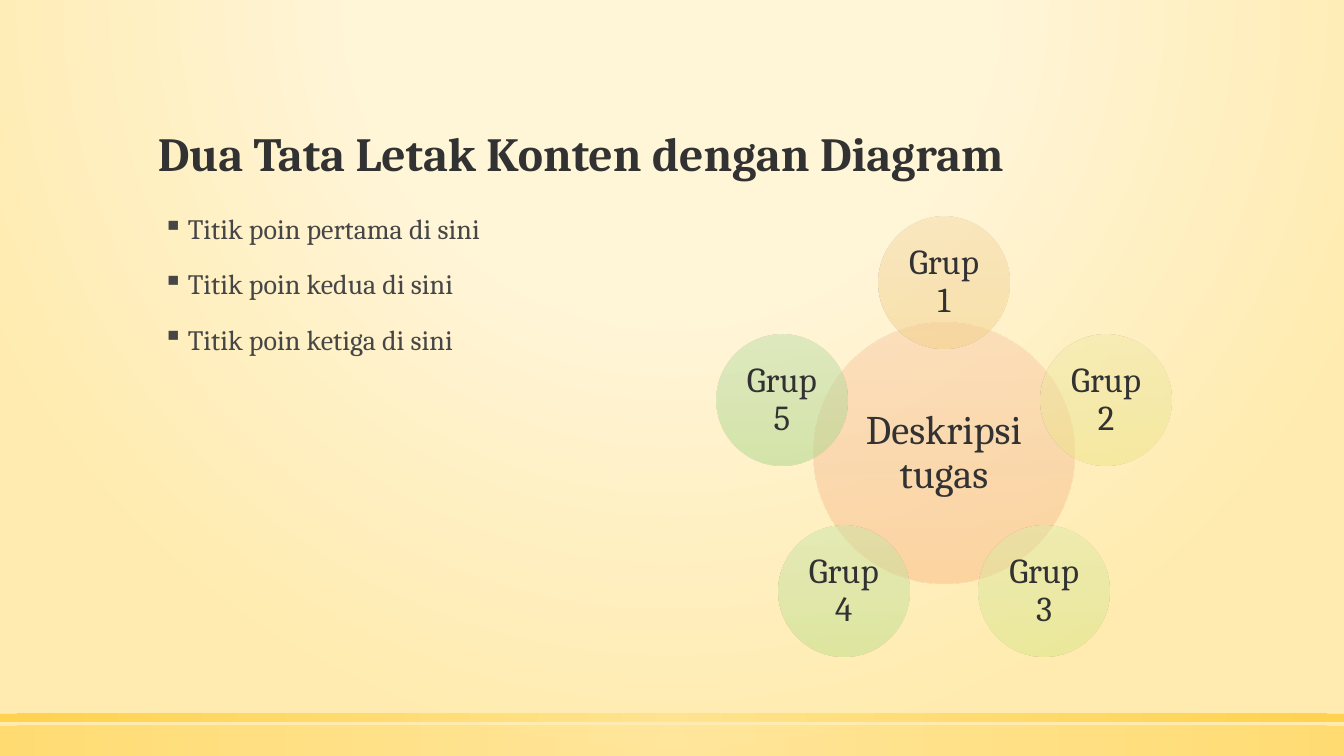
from math import cos, radians, sin

from pptx import Presentation
from pptx.dml.color import RGBColor
from pptx.enum.shapes import MSO_SHAPE
from pptx.enum.text import MSO_ANCHOR, PP_ALIGN
from pptx.oxml import parse_xml
from pptx.oxml.ns import nsdecls, qn
from pptx.util import Emu, Pt

PX = 914400 / 100.8
FONT = "Cambria"
COLORS = {"title": "323232", "body": "464646", "cream": "FFF5D7", "sand": "FFEBAF",
          "gold": "FFE186", "amber": "FFCD36"}
HUB = ("FACDA9", "F8C39A", "FBBB87")
GROUPS = [("F6DBA8", "F3D49A", "F5D187"), ("F1EAA8", "EDE59A", "EEE587"),
          ("E0EBA8", "DAE79A", "D8E787"), ("CDE6A8", "C5E19A", "BEE088"),
          ("BFE0A9", "B4DA9B", "A9D889")]
DOWN = '<a:lin ang="5400000" scaled="0"/>'
POINTS = ["Titik poin pertama di sini", "Titik poin kedua di sini", "Titik poin ketiga di sini"]


def px(*sizes):
    """Turn pixel lengths into EMU."""
    return [Emu(round(size * PX)) for size in sizes]


def radial(top, bottom):
    """Return a circular path centred across, with the given focus in percent."""
    return ('<a:path path="circle"><a:fillToRect l="50000" r="50000" '
            f't="{top * 1000}" b="{bottom * 1000}"/></a:path>')


def blend(owner, stops, way):
    """Swap the solid fill of an element for a gradient of (place, colour, opacity)."""
    marks = "".join(
        f'<a:gs pos="{place * 1000}"><a:srgbClr val="{color}">'
        f'<a:alpha val="{alpha * 1000}"/></a:srgbClr></a:gs>'
        for place, color, alpha in stops)
    solid = owner.find(".//" + qn("a:solidFill"))
    solid.getparent().replace(solid, parse_xml(
        f'<a:gradFill {nsdecls("a")} rotWithShape="1"><a:gsLst>{marks}</a:gsLst>{way}</a:gradFill>'))


def shape(slide, kind, box, stops, way):
    """Add a borderless shape with a gradient fill."""
    item = slide.shapes.add_shape(kind, *px(*box))
    item.shadow.inherit = False
    item.line.fill.background()
    item.fill.solid()
    blend(item._element, stops, way)
    return item


def write(para, text, size, color, bold=False):
    """Add one styled run to a paragraph."""
    para.line_spacing = 0.9
    run = para.add_run()
    run.text = text
    font = run.font
    font.name, font.size, font.bold = FONT, Pt(size), bold
    font.color.rgb = RGBColor.from_string(COLORS[color])


def frame(slide, box):
    """Add a wrapping text box and return its frame."""
    text = slide.shapes.add_textbox(*px(*box)).text_frame
    text.word_wrap = True
    return text


def backdrop(slide, width, height):
    """Paint the background and the two bars at the foot."""
    slide.background.fill.solid()
    cream = COLORS["cream"]
    blend(slide._element, [(0, cream, 59), (40, cream, 66), (100, COLORS["sand"], 100)],
          radial(-80, 180))
    for top, tall, alpha in ((height - 30, 30, 50), (height - 42, 8, 80)):
        shape(slide, MSO_SHAPE.RECTANGLE, (0, top, width, tall),
              [(0, COLORS["gold"], alpha), (100, COLORS["amber"], alpha)], radial(50, 50))


def heading(slide, box):
    """Place the title on the bottom of its box."""
    text = frame(slide, box)
    text.vertical_anchor = MSO_ANCHOR.BOTTOM
    write(text.paragraphs[0], "Dua Tata Letak Konten dengan Diagram", 34, "title", True)


def bullets(slide, box):
    """List the points with square bullets."""
    text = frame(slide, box)
    for index, point in enumerate(POINTS):
        para = text.add_paragraph() if index else text.paragraphs[0]
        para.space_before = Pt(18)
        write(para, point, 20, "body")
        props = para._p.get_or_add_pPr()
        left, hang = px(30, -25)
        props.set("marL", str(left))
        props.set("indent", str(hang))
        props.append(parse_xml(f'<a:buChar {nsdecls("a")} char="▪"/>'))


def bubble(slide, x, y, size, tints, label, points, inset):
    """Draw a labelled translucent circle about a centre."""
    stops = list(zip((0, 50, 100), tints, (50, 50, 50)))
    item = shape(slide, MSO_SHAPE.OVAL, (x - size / 2, y - size / 2, size, size), stops, DOWN)
    text = item.text_frame
    text.word_wrap = True
    text.vertical_anchor = MSO_ANCHOR.MIDDLE
    text.margin_left, text.margin_right, text.margin_top, text.margin_bottom = px(*[inset] * 4)
    para = text.paragraphs[0]
    para.alignment = PP_ALIGN.CENTER
    write(para, label, points, "title")


def wheel(slide, box):
    """Ring the groups evenly around the hub."""
    left, top, width, size = box
    x, y = left + width / 2, top + 236
    reach = y - top - size / 2
    bubble(slide, x, y, 2 * size - 1, HUB, "Deskripsi tugas", 29, 4)
    for index, tints in enumerate(GROUPS):
        turn = radians(index * 360 / len(GROUPS))
        bubble(slide, x + reach * sin(turn), y - reach * cos(turn), size, tints,
               f"Grup {index + 1}", 25, 3)


def main():
    """Build and save the slide."""
    deck = Presentation()
    deck.slide_width, deck.slide_height = px(1344, 756)
    slide = deck.slides.add_slide(deck.slide_layouts[6])
    backdrop(slide, 1344, 756)
    heading(slide, (148, 51, 1048, 136))
    bullets(slide, (148, 210, 504, 455))
    wheel(slide, (716, 217, 456, 131))
    deck.save("out.pptx")


if __name__ == "__main__":
    main()
